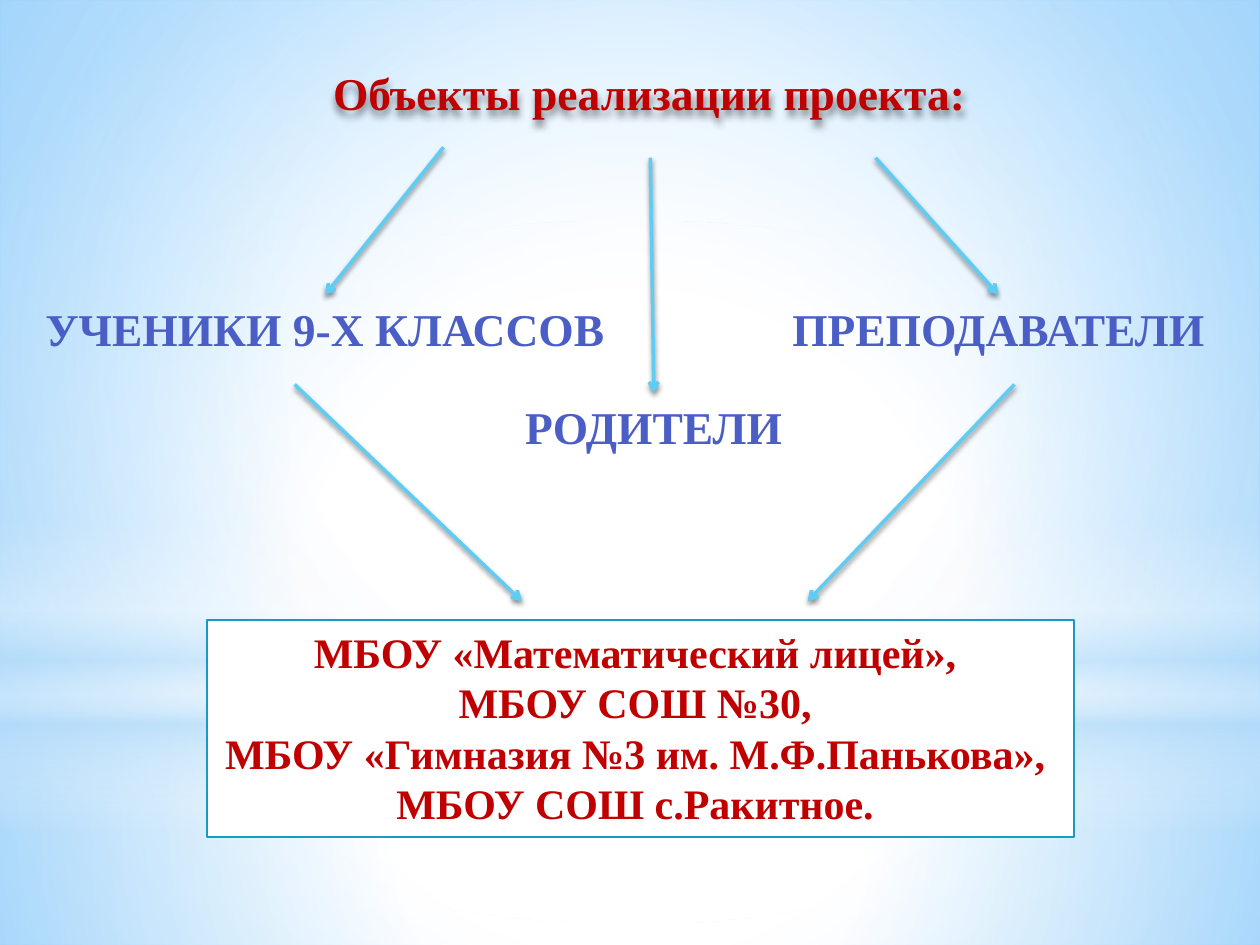
from dataclasses import dataclass
from lxml.etree import Element, SubElement
from pptx import Presentation
from pptx.dml.color import RGBColor
from pptx.enum.shapes import MSO_CONNECTOR as Connector, MSO_SHAPE as Preset
from pptx.enum.text import MSO_ANCHOR as Anchor, MSO_AUTO_SIZE as AutoSize, PP_ALIGN as Align
from pptx.oxml.ns import qn
from pptx.util import Cm, Pt


@dataclass(frozen=True)
class Theme:
    font: str = "Times New Roman"
    heading_size: int = 26
    school_size: int = 24
    red: str = "C00000"
    white: str = "FFFFFF"
    sky: str = "63BCFF"
    pale: str = "B4DCFA"
    border: str = "1999C6"
    arrow: str = "5ECCF3"
    shadow: str = "000000"
    group_stops: tuple = (
        (0, "717FD2", 100), (49, "4A5EC6", 100), (50, "324CB5", 100),
        (92, "31479D", 100), (100, "30469A", 100),
    )


def set_gradient(properties, stops, focus=None):
    gradient = Element(qn("a:gradFill"), rotWithShape="1")
    stop_list = SubElement(gradient, qn("a:gsLst"))
    for position, color, opacity in stops:
        stop = SubElement(stop_list, qn("a:gs"), pos=str(position * 1000))
        tone = SubElement(stop, qn("a:srgbClr"), val=color)
        if opacity < 100:
            SubElement(tone, qn("a:alpha"), val=str(opacity * 1000))
    if focus:
        circle = SubElement(gradient, qn("a:path"), path="circle")
        sides = {side: str(share * 1000) for side, share in zip("ltrb", focus)}
        SubElement(circle, qn("a:fillToRect"), **sides)
    else:
        SubElement(gradient, qn("a:lin"), ang="5400000", scaled="0")
    properties.replace(properties.find(qn("a:solidFill")), gradient)


def add_shadow(properties, blur, distance):
    effects = SubElement(properties, qn("a:effectLst"))
    shadow = SubElement(
        effects, qn("a:outerShdw"), blurRad=str(Pt(blur)), dist=str(Pt(distance)),
        dir="5400000", rotWithShape="0",
    )
    tone = SubElement(shadow, qn("a:srgbClr"), val=theme.shadow)
    SubElement(tone, qn("a:alpha"), val="45000")


theme = Theme()
presentation = Presentation()
presentation.slide_width, presentation.slide_height = Cm(25.4), Cm(19.05)
slide = presentation.slides.add_slide(presentation.slide_layouts[5])
shapes = slide.shapes

slide.background.fill.solid()
set_gradient(
    slide._element.find(".//" + qn("p:bgPr")),
    [(0, theme.white, 100), (42, theme.white, 100), (100, theme.sky, 100)],
    (24, 44, 24, 12),
)

center = (50, 50, 50, 50)
glows = [
    (Preset.RECTANGLE, 14.17, 4.88, center,
     [(0, theme.white, 91), (37, theme.white, 76), (100, theme.pale, 79)]),
    (Preset.RECTANGLE, 0, 14.17, center,
     [(0, theme.white, 89), (48, theme.white, 62), (100, theme.pale, 79)]),
    (Preset.RECTANGLE, 10.46, 6.35, None,
     [(0, theme.white, 0), (29, theme.white, 30), (45, theme.pale, 40),
      (55, theme.white, 26), (65, theme.pale, 60), (100, theme.white, 0)]),
    (Preset.OVAL, 4.45, 14.17, center,
     [(0, theme.white, 100), (56, theme.white, 0)]),
]
for preset, top, height, focus, stops in glows:
    glow = shapes.add_shape(preset, 0, Cm(top), presentation.slide_width, Cm(height))
    glow.shadow.inherit = False
    glow.line.fill.background()
    glow.fill.solid()
    set_gradient(glow._element.spPr, stops, focus)

title = shapes.title
glow._element.addnext(title._element)
title.left, title.top, title.width, title.height = Cm(6.15), Cm(1.19), Cm(13.89), Cm(1.37)
add_shadow(title._element.spPr, 4, 3)

students = shapes.add_textbox(Cm(0.61), Cm(5.94), Cm(11.89), Cm(1.37))
parents = shapes.add_textbox(Cm(10.31), Cm(7.92), Cm(5.74), Cm(1.37))
teachers = shapes.add_textbox(Cm(15.67), Cm(5.94), Cm(8.92), Cm(1.37))

schools = shapes.add_shape(Preset.RECTANGLE, Cm(4.17), Cm(12.5), Cm(17.48), Cm(4.37))
schools.shadow.inherit = False
schools.fill.solid()
schools.fill.fore_color.rgb = RGBColor.from_string(theme.white)
schools.line.color.rgb = RGBColor.from_string(theme.border)
schools.line.width = Pt(1.25)

school_lines = [
    "МБОУ «Математический лицей», ",
    "МБОУ СОШ №30, ",
    "МБОУ «Гимназия №3 им. М.Ф.Панькова», ",
    "МБОУ СОШ с.Ракитное. ",
]
texts = [
    (title, ["Объекты реализации проекта:"], theme.heading_size, True),
    (students, ["УЧЕНИКИ 9-Х КЛАССОВ"], theme.heading_size, False),
    (parents, ["РОДИТЕЛИ"], theme.heading_size, False),
    (teachers, ["ПРЕПОДАВАТЕЛИ"], theme.heading_size, False),
    (schools, school_lines, theme.school_size, True),
]
for shape, lines, size, is_red in texts:
    frame = shape.text_frame
    frame.word_wrap = is_red
    frame.auto_size = AutoSize.SHAPE_TO_FIT_TEXT
    frame.vertical_anchor = Anchor.TOP
    for index, line in enumerate(lines):
        paragraph = frame.add_paragraph() if index else frame.paragraphs[0]
        paragraph.alignment = Align.CENTER
        run = paragraph.add_run()
        run.text = line
        run.font.name = theme.font
        run.font.size = Pt(size)
        run.font.bold = True
        run.font.color.rgb = RGBColor.from_string(theme.red)
        if not is_red:
            set_gradient(run.font._element, theme.group_stops)

arrows = [
    (8.94, 2.97, 6.55, 5.94, students),
    (13.11, 3.18, 13.18, 7.92, parents),
    (17.65, 3.18, 20.13, 5.94, teachers),
    (5.94, 7.75, 10.52, 12.12, None),
    (20.45, 7.75, 16.28, 12.12, None),
]
for start_x, start_y, end_x, end_y, target in arrows:
    arrow = shapes.add_connector(
        Connector.STRAIGHT, Cm(start_x), Cm(start_y), Cm(end_x), Cm(end_y)
    )
    if target:
        arrow.end_connect(target, 0)
    arrow.line.color.rgb = RGBColor.from_string(theme.arrow)
    arrow.line.width = Pt(2)
    SubElement(arrow.line._get_or_add_ln(), qn("a:tailEnd"), type="arrow")
    add_shadow(arrow._element.spPr, 3.1, 1.8)

presentation.save("out.pptx")
